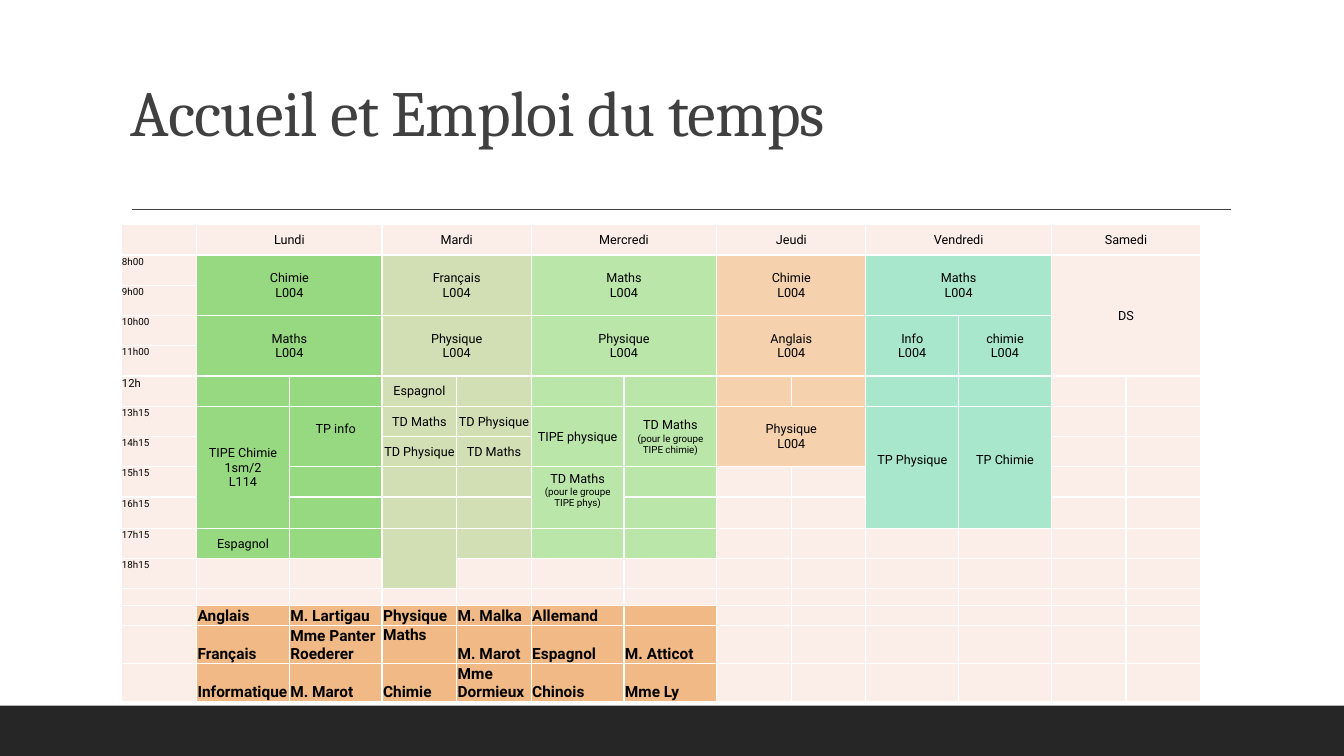
from lxml import etree
from pptx import Presentation
from pptx.dml.color import RGBColor
from pptx.enum.shapes import MSO_CONNECTOR, MSO_SHAPE
from pptx.enum.text import MSO_ANCHOR, PP_ALIGN
from pptx.oxml.ns import qn
from pptx.util import Inches, Pt

TOP, MIDDLE, BOTTOM = MSO_ANCHOR.TOP, MSO_ANCHOR.MIDDLE, MSO_ANCHOR.BOTTOM
LEFT, CENTER, JUSTIFY = PP_ALIGN.LEFT, PP_ALIGN.CENTER, PP_ALIGN.JUSTIFY
RECTANGLE, STRAIGHT = MSO_SHAPE.RECTANGLE, MSO_CONNECTOR.STRAIGHT

PALE, ORANGE = "FBEEE8", "F1B985"
GREEN, SAND, LIGHT_GREEN, PEACH, TEAL = "97D980", "D2DFB5", "BAE6AA", "F6D1AD", "A8E7CC"

COLUMN_WIDTHS = [0.75] + [0.92, 0.92, 0.74, 0.74] * 3
ROW_HEIGHTS = [0.3] * 9 + [0.31, 0.3, 0.3, 0.17, 0.17, 0.34, 0.34]

# Coloured zones: fill, first and last row, first and last column
ZONES = [
    (GREEN, 1, 10, 1, 2),
    (SAND, 1, 10, 3, 4),
    (SAND, 11, 11, 3, 3),
    (LIGHT_GREEN, 1, 10, 5, 6),
    (PEACH, 1, 7, 7, 8),
    (TEAL, 1, 9, 9, 10),
    (ORANGE, 13, 15, 1, 6),
]

DAYS = ["Lundi", "Mardi", "Mercredi", "Jeudi", "Vendredi", "Samedi"]
HOURS = ["8h00", "9h00", "10h00", "11h00", "12h", "13h15",
         "14h15", "15h15", "16h15", "17h15", "18h15"]

# Lessons: row, column, rows spanned, columns spanned, text, format
RAISED = {"bottom_margin": 0.15}
LESSONS = [
    (1, 1, 2, 2, "Chimie\nL004", {}),
    (1, 3, 2, 2, "Français\nL004", {}),
    (1, 5, 2, 2, "Maths\nL004", {}),
    (1, 7, 2, 2, "Chimie\nL004", {}),
    (1, 9, 2, 2, "Maths\nL004", {}),
    (1, 11, 4, 2, "DS", {}),
    (3, 1, 2, 2, "Maths\nL004", {}),
    (3, 3, 2, 2, "Physique\nL004", {}),
    (3, 5, 2, 2, "Physique\nL004", {}),
    (3, 7, 2, 2, "Anglais\nL004", {}),
    (3, 9, 2, 1, "Info\nL004", {}),
    (3, 10, 2, 1, "chimie\nL004", {}),
    (5, 3, 1, 1, "Espagnol", {}),
    (6, 1, 4, 1, "TIPE Chimie 1sm/2\nL114", {}),
    (6, 2, 2, 1, "TP info", RAISED),
    (6, 3, 1, 1, "TD Maths", {}),
    (6, 4, 1, 1, "TD Physique", {}),
    (6, 5, 2, 1, "TIPE physique", {}),
    (6, 6, 2, 1, "TD Maths\n", {"note": "(pour le groupe\nTIPE chimie)"}),
    (6, 7, 2, 2, "Physique\nL004", {}),
    (6, 9, 4, 1, "TP Physique", RAISED),
    (6, 10, 4, 1, "TP Chimie", RAISED),
    (7, 3, 1, 1, "TD Physique", {}),
    (7, 4, 1, 1, "TD Maths", {}),
    (8, 5, 2, 1, "TD Maths\n", {"note": "(pour le groupe\nTIPE phys)", **RAISED}),
    (10, 1, 1, 1, "Espagnol", {}),
    (10, 3, 2, 1, "", {}),
]

TEACHERS = [
    ["Anglais", "M. Lartigau", "Physique", "M. Malka", "Allemand", ""],
    ["Français", "Mme Panter Roederer", "Maths", "M. Marot", "Espagnol", "M. Atticot"],
    ["Informatique", "M. Marot", "Chimie", "Mme Dormieux", "Chinois", "Mme Ly"],
]


def color(value):
    return RGBColor.from_string(value)


def add_text(paragraph, text, size=9, font="Roboto", fill="000000", bold=False,
             align=LEFT, spacing=None):
    """Append text to a paragraph, with a line break at each newline."""
    paragraph.alignment = align
    for index, line in enumerate(text.split("\n")):
        if index:
            paragraph.add_line_break()
            line_break = paragraph._p.findall(qn("a:br"))[-1]
            etree.SubElement(line_break, qn("a:rPr"), sz=str(size * 100))
        if line:
            run = paragraph.add_run()
            run.text = line
            run.font.size = Pt(size)
            run.font.name = font
            run.font.bold = bold
            run.font.color.rgb = color(fill)
            if spacing is not None:
                run.font._element.set("spc", str(int(spacing * 100)))


class SlideBuilder:
    def __init__(self, slide):
        self.slide = slide
        self.dark = "404040"

    def bar(self, left, top, width, height, fill):
        shape = self.slide.shapes.add_shape(
            RECTANGLE, Inches(left), Inches(top), Inches(width), Inches(height))
        shape.shadow.inherit = False
        shape.fill.solid()
        shape.fill.fore_color.rgb = color(fill)
        shape.line.fill.background()

    def rule(self, left, right, y):
        connector = self.slide.shapes.add_connector(
            STRAIGHT, Inches(left), Inches(y), Inches(right), Inches(y))
        connector.line.color.rgb = color(self.dark)
        connector.line.width = Pt(1)
        etree.SubElement(connector._element.spPr, qn("a:effectLst"))

    def title(self, text, left, top, width, height):
        box = self.slide.shapes.add_textbox(
            Inches(left), Inches(top), Inches(width), Inches(height))
        frame = box.text_frame
        frame.word_wrap = True
        frame.vertical_anchor = BOTTOM
        paragraph = frame.paragraphs[0]
        paragraph.line_spacing = 0.9
        add_text(paragraph, text, size=46, font="Cambria", fill=self.dark,
                 align=JUSTIFY, spacing=-0.5)

    def table(self, left, top, widths, heights):
        table = self.slide.shapes.add_table(
            len(heights), len(widths), Inches(left), Inches(top),
            Inches(sum(widths)), Inches(sum(heights))).table
        for column, width in zip(table.columns, widths):
            column.width = Inches(width)
        for row, height in zip(table.rows, heights):
            row.height = Inches(height)
        for cell in table.iter_cells():
            self.style_cell(cell)
        return table

    def style_cell(self, cell):
        cell.margin_left = cell.margin_right = cell.margin_top = Inches(0.01)
        cell.margin_bottom = 0
        cell.fill.solid()
        cell.fill.fore_color.rgb = color(PALE)
        # Small empty paragraphs keep the low rows at their height
        paragraph = cell.text_frame.paragraphs[0]
        etree.SubElement(paragraph._p, qn("a:endParaRPr"), sz="700")
        properties = cell._tc.get_or_add_tcPr()
        for index, side in enumerate(("lnL", "lnR", "lnT", "lnB")):
            border = etree.Element(qn("a:" + side), w=str(Pt(1)))
            solid = etree.SubElement(border, qn("a:solidFill"))
            etree.SubElement(solid, qn("a:srgbClr"), val="FFFFFF")
            properties.insert(index, border)

    def cell_text(self, cell, text, anchor=MIDDLE, note="", bottom_margin=0, **style):
        cell.vertical_anchor = anchor
        cell.margin_bottom = Inches(bottom_margin)
        paragraph = cell.text_frame.paragraphs[0]
        add_text(paragraph, text, **style)
        if note:
            add_text(paragraph, note, **{**style, "size": 7})


def fill_timetable(builder, table):
    for fill, first_row, last_row, first_column, last_column in ZONES:
        for row in range(first_row, last_row + 1):
            for column in range(first_column, last_column + 1):
                table.cell(row, column).fill.fore_color.rgb = color(fill)

    # Days, hours and lessons
    headings = [(0, 1 + 2 * index, 1, 2, day, {}) for index, day in enumerate(DAYS)]
    for row, column, rows, columns, text, style in headings + LESSONS:
        cell = table.cell(row, column)
        if rows * columns > 1:
            cell.merge(table.cell(row + rows - 1, column + columns - 1))
        builder.cell_text(cell, text, align=CENTER, **style)
    for row, hour in enumerate(HOURS, 1):
        builder.cell_text(table.cell(row, 0), hour, anchor=TOP,
                          size=8 if hour == "12h" else 7)

    # Subjects and teachers
    for row, names in enumerate(TEACHERS, 13):
        for column, name in enumerate(names, 1):
            builder.cell_text(table.cell(row, column), name, size=11, bold=True,
                              anchor=TOP if name == "Maths" else BOTTOM)


def main():
    presentation = Presentation()
    presentation.slide_width, presentation.slide_height = Inches(13.33), Inches(7.5)
    builder = SlideBuilder(presentation.slides.add_slide(presentation.slide_layouts[6]))
    builder.bar(0, 7, 13.33, 0.5, "262626")
    builder.rule(1.31, 12.21, 2.08)
    builder.title("Accueil et Emploi du temps", 1.2, 0.59, 11, 0.95)
    fill_timetable(builder, builder.table(1.2, 2.23, COLUMN_WIDTHS, ROW_HEIGHTS))
    presentation.save("out.pptx")


if __name__ == "__main__":
    main()
